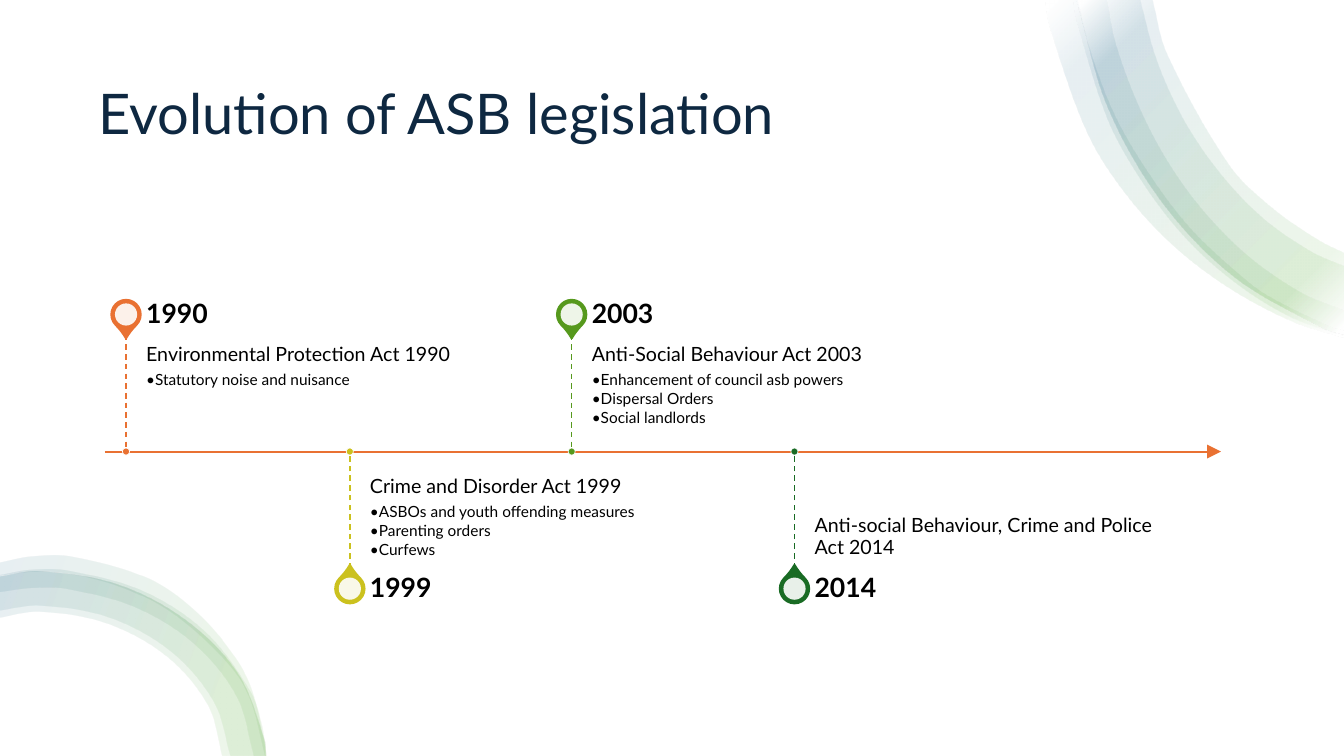
import math

from lxml import etree
from pptx import Presentation
from pptx import util as u
from pptx.dml.color import RGBColor
from pptx.enum import dml, shapes, text
from pptx.oxml import parse_xml
from pptx.oxml.ns import nsdecls, qn

TITLE = "Evolution of ASB legislation"
FONT = "Lato"
ORANGE, NAVY, BLACK, WHITE = "E97132", "0E2841", "000000", "FFFFFF"

# x, year, colour, act, points
MILESTONES = [
    (1.25, "1990", ORANGE, "Environmental Protection Act 1990", ["Statutory noise and nuisance"]),
    (3.47, "1999", "CBC11E", "Crime and Disorder Act 1999",
     ["ASBOs and youth offending measures", "Parenting orders", "Curfews"]),
    (5.67, "2003", "56991D", "Anti-Social Behaviour Act 2003",
     ["Enhancement of council asb powers", "Dispersal Orders", "Social landlords"]),
    (7.88, "2014", "196B24", "Anti-social Behaviour, Crime and Police Act 2014", []),
]

# Ribbon bands: points along the outer edge, then back along the inner edge (inches)
TOP_EDGE = [(10.68, 0), (10.99, 1.07), (11.52, 2), (12.23, 2.74), (13.09, 3.24), (13.33, 3.32)]
TOP_BANDS = [
    ([(10.37, 0), (10.41, 0.26), (10.78, 1.31), (11.16, 1.92), (11.65, 2.45), (12.21, 2.87),
      (12.82, 3.19), (13.33, 3.35)],
     [(13.33, 3.28), (13.17, 3.23), (12.57, 2.93), (12.3, 2.73), (11.81, 2.27), (11.4, 1.73),
      (11.06, 1.15), (10.82, 0.52), (10.69, 0)]),
    (TOP_EDGE,
     [(13.33, 2.51), (13.07, 2.38), (12.61, 2.06), (12.19, 1.64), (11.58, 0.55), (11.43, 0)]),
    ([(10.65, 0), (10.68, 0.2), (10.99, 1.19), (11.32, 1.79), (11.73, 2.33), (12.23, 2.79),
      (12.79, 3.14), (13.33, 3.33)],
     [(13.33, 3.08), (12.9, 2.9), (12.39, 2.55), (11.95, 2.11), (11.58, 1.6), (11.29, 1.04),
      (11.07, 0.44), (10.98, 0)]),
    (TOP_EDGE,
     [(13.33, 2.64), (13.01, 2.5), (12.53, 2.17), (12.1, 1.72), (11.74, 1.19), (11.47, 0.59),
      (11.31, 0)]),
]
BOTTOM_EDGE = [(2.63, 7.5), (2.62, 7.35), (2.36, 6.69), (1.85, 6.16), (1.17, 5.8), (0.4, 5.67),
               (0, 5.72)]
BOTTOM_BANDS = [
    (BOTTOM_EDGE,
     [(0, 6.13), (0.4, 6.07), (1.07, 6.19), (1.66, 6.52), (2.06, 7), (2.2, 7.5)]),
    (BOTTOM_EDGE,
     [(0, 6.06), (0.4, 6.01), (1.09, 6.13), (1.7, 6.47), (2.12, 6.97), (2.28, 7.5)]),
    ([(2.63, 7.5), (2.59, 7.19), (2.47, 6.85), (2.03, 6.27), (1.42, 5.87), (0.69, 5.67),
      (0.31, 5.66), (0, 5.71)],
     [(0, 5.88), (0.33, 5.84), (0.67, 5.85), (1.34, 6.03), (1.92, 6.39), (2.34, 6.91),
      (2.51, 7.5)]),
    ([(2.64, 7.5), (2.5, 6.87), (2.33, 6.53), (1.96, 6.09), (1.48, 5.75), (0.71, 5.53),
      (0.31, 5.53), (0, 5.59)],
     [(0, 5.72), (0.32, 5.68), (0.69, 5.7), (1.22, 5.84), (1.71, 6.09), (2.25, 6.58),
      (2.47, 6.93), (2.62, 7.5)]),
]
GREEN, BLUE = "4EA72E", "156082"
RIBBONS = [  # bands, gradient angle, gradient stops
    (TOP_BANDS, 45, [(2, WHITE), (15, BLUE), (84, GREEN), (98, WHITE)]),
    (BOTTOM_BANDS, 20, [(0, BLUE), (84, GREEN), (100, GREEN)]),
]

SLIDE_SIZE = (13.33, 7.5)
AXIS_Y, AXIS_LEFT, AXIS_RIGHT = 4.48, 1.04, 12.11
STEM, PIN_OFFSET, YEAR_HEIGHT = 1.16, 1.36, 0.4
TEXT_GAP, TEXT_WIDTH = 0.2, 3.67


def length(inches):
    return u.Cm(inches * 2.54)


def lengths(*inches):
    return [length(value) for value in inches]


def colour(target, hex_string):
    """Set a fill to a solid colour, or a line or font to a colour."""
    if hasattr(target, "solid"):
        target.solid()
        target = target.fore_color
    else:
        target = target.color
    target.rgb = RGBColor.from_string(hex_string)


def handles(edge):
    """Give the two Bézier control points of each segment along an edge."""
    padded = [edge[0], *edge, edge[-1]]
    pairs = []
    for before, start, end, after in zip(padded, padded[1:], padded[2:], padded[3:]):
        reach = math.dist(start, end) / 3
        leave = reach / math.dist(before, end)
        arrive = reach / math.dist(start, after)
        pairs.append((
            [s + (e - b) * leave for b, s, e in zip(before, start, end)],
            [e - (a - s) * arrive for s, e, a in zip(start, end, after)]))
    return pairs


def add_band(slide, outer, inner, angle, stops):
    points = outer + inner
    builder = slide.shapes.build_freeform(*lengths(*points[0]))
    builder.add_line_segments([lengths(*point) for point in points[1:]])
    band = builder.convert_to_shape()
    band.shadow.inherit = False
    band.line.fill.background()
    segments = list(band._element.iter(qn("a:lnTo")))
    for segment, pair in zip(segments, handles(outer) + [None] + handles(inner)):
        if pair:
            segment.tag = qn("a:cubicBezTo")
            for index, (x, y) in enumerate(pair):
                control = etree.Element(qn("a:pt"), x=str(length(x) - band.left),
                                        y=str(length(y) - band.top))
                segment.insert(index, control)
    stop_xml = "".join(
        f'<a:gs pos="{position * 1000}"><a:srgbClr val="{value}"><a:alpha val="10000"/>'
        f'</a:srgbClr></a:gs>' for position, value in stops)
    gradient = parse_xml(f'<a:gradFill {nsdecls("a")} rotWithShape="1"><a:gsLst>{stop_xml}</a:gsLst>'
                         f'<a:lin ang="{angle * 60000}" scaled="0"/></a:gradFill>')
    band._element.spPr.find(qn("a:custGeom")).addnext(gradient)


def add_line(slide, start, end, line_colour, width):
    line = slide.shapes.add_connector(shapes.MSO_CONNECTOR.STRAIGHT, *lengths(*start, *end))
    colour(line.line, line_colour)
    line.line.width = u.Pt(width)
    etree.SubElement(line._element.spPr, qn("a:effectLst"))
    return line


def add_shape(slide, kind, box, fill, outline=None, width=0):
    shape = slide.shapes.add_shape(kind, *lengths(*box))
    shape.shadow.inherit = False
    colour(shape.fill, fill)
    if outline:
        colour(shape.line, outline)
        shape.line.width = u.Pt(width)
    else:
        shape.line.fill.background()
    return shape


def centred(x, y, size):
    return x - size / 2, y - size / 2, size, size


def add_text(slide, box, lines, anchor, insets):
    """Add lines given as (text, size, colour, bold, space after, bulleted)."""
    frame = slide.shapes.add_textbox(*lengths(*box)).text_frame
    frame.word_wrap = True
    frame.vertical_anchor = anchor
    frame.margin_left, frame.margin_top, frame.margin_right, frame.margin_bottom = lengths(*insets)
    frame.text = "\n".join(line[0] for line in lines)
    for paragraph, (_, size, font_colour, bold, after, bulleted) in zip(frame.paragraphs, lines):
        paragraph.line_spacing = 0.9
        paragraph.space_after = u.Pt(after)
        font = paragraph.runs[0].font
        font.name, font.size, font.bold = FONT, u.Pt(size), bold
        colour(font, font_colour)
        if bulleted:
            properties = paragraph._p.get_or_add_pPr()
            properties.set("marL", str(length(0.06)))
            properties.set("indent", str(-length(0.06)))
            etree.SubElement(properties, qn("a:buFont")).set("typeface", FONT)
            etree.SubElement(properties, qn("a:buChar")).set("char", "•")


def add_milestone(slide, above, x, year, accent, act, points):
    side = -1 if above else 1
    pin_y = AXIS_Y + side * PIN_OFFSET
    kinds, anchors = shapes.MSO_SHAPE, text.MSO_ANCHOR
    pin = add_shape(slide, kinds.TEAR, centred(x, pin_y, 0.29), accent, accent, 1.5)
    pin.adjustments[0] = 1.15
    pin.rotation = 135 if above else 315
    centre = add_shape(slide, kinds.OVAL, centred(x, pin_y, 0.22), WHITE)
    value = centre._element.spPr.find(qn("a:solidFill"))[0]
    etree.SubElement(value, qn("a:alpha")).set("val", "90000")

    left = x + TEXT_GAP
    body_top = AXIS_Y - STEM if above else AXIS_Y
    year_top = body_top - YEAR_HEIGHT if above else body_top + STEM
    lines = [(act, 14, BLACK, False, 4.5, False)]
    lines += [(point, 11, BLACK, False, 1.65, True) for point in points]
    add_text(slide, (left, body_top, TEXT_WIDTH, STEM), lines,
             anchors.TOP if above else anchors.BOTTOM,
             (0, 0.1, 0.1, 0.15) if above else (0, 0.15, 0, 0.1))
    add_text(slide, (left, year_top, TEXT_WIDTH, YEAR_HEIGHT),
             [(year, 19, BLACK, True, 6.65, False)], anchors.MIDDLE, (0, 0, 0.13, 0))
    stem = add_line(slide, (x, AXIS_Y + side * STEM), (x, AXIS_Y), accent, 1)
    stem.line.dash_style = dml.MSO_LINE.DASH
    add_shape(slide, kinds.OVAL, centred(x, AXIS_Y, 0.07), accent, WHITE, 0.5)


def main():
    presentation = Presentation()
    presentation.slide_width, presentation.slide_height = lengths(*SLIDE_SIZE)
    slide = presentation.slides.add_slide(presentation.slide_layouts[6])
    add_shape(slide, shapes.MSO_SHAPE.RECTANGLE, (0, 0, *SLIDE_SIZE), WHITE)
    add_text(slide, (0.88, 0.5, 11.57, 1.3), [(TITLE, 40, NAVY, False, 6, False)],
             text.MSO_ANCHOR.MIDDLE, (0.1, 0.05, 0.1, 0.05))
    for bands, angle, stops in RIBBONS:
        for outer, inner in bands:
            add_band(slide, outer, inner, angle, stops)
    axis = add_line(slide, (AXIS_LEFT, AXIS_Y), (AXIS_RIGHT, AXIS_Y), ORANGE, 1.5)
    etree.SubElement(axis.line._get_or_add_ln(), qn("a:tailEnd"), type="triangle", w="lg", len="lg")
    for index, milestone in enumerate(MILESTONES):
        add_milestone(slide, index % 2 == 0, *milestone)
    presentation.save("out.pptx")


if __name__ == "__main__":
    main()
